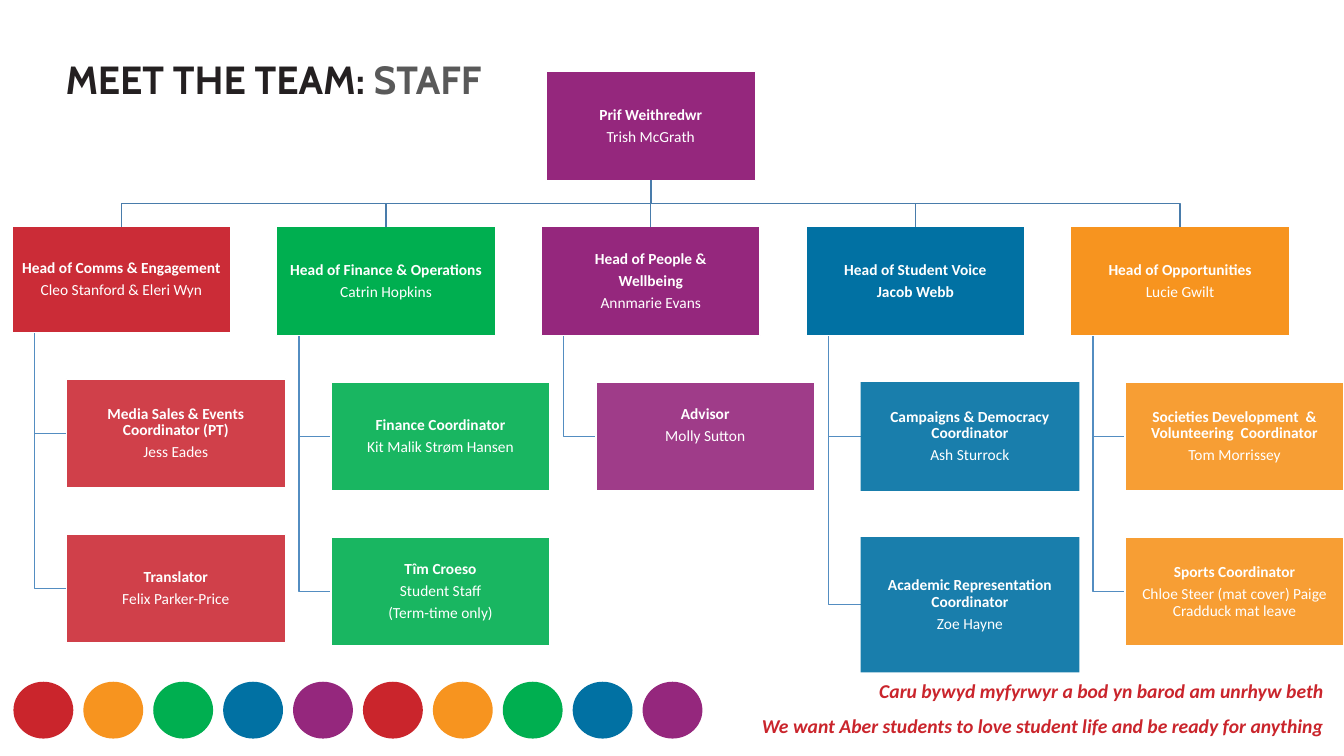
from lxml import etree
from pptx import Presentation
from pptx.dml.color import RGBColor
from pptx.enum.shapes import MSO_CONNECTOR, MSO_SHAPE
from pptx.enum.text import MSO_ANCHOR, MSO_AUTO_SIZE, PP_ALIGN
from pptx.oxml.ns import qn
from pptx.util import Inches, Pt

RECT, OVAL = MSO_SHAPE.RECTANGLE, MSO_SHAPE.OVAL
STRAIGHT = MSO_CONNECTOR.STRAIGHT
MIDDLE, TOP, NO_FIT = MSO_ANCHOR.MIDDLE, MSO_ANCHOR.TOP, MSO_AUTO_SIZE.NONE
LEFT, CENTER, RIGHT = PP_ALIGN.LEFT, PP_ALIGN.CENTER, PP_ALIGN.RIGHT

COLORS = {
    "red": "CA252C", "crimson": "CB2C37", "orange": "F7941F",
    "green": "00AF50", "blue": "0171A3", "purple": "95277D",
    "white": "FFFFFF", "ink": "242021", "grey": "595959",
    "trunk": "497CAB", "branch": "538DC1",
}
CARD_W, CARD_H = 2.17, 1.08
CHILD_DX, CHILD_GAP, CHILD_PITCH, BRANCH_DX = 0.54, 0.46, 1.54, 0.22
DOTS = ["red", "orange", "green", "blue", "purple"] * 2
MOTTO = ["Caru bywyd myfyrwyr a bod yn barod am unrhyw beth",
         "We want Aber students to love student life and be ready for anything"]

BOSS = {"bold": ["Prif Weithredwr"], "plain": ["Trish McGrath"]}
TEAMS = [
    {"color": "crimson", "head": {"bold": ["Head of Comms & Engagement"],
                                  "plain": ["Cleo Stanford & Eleri Wyn"], "h": 1.05},
     "staff": [{"bold": ["Media Sales & Events Coordinator (PT)"], "plain": ["Jess Eades"]},
               {"bold": ["Translator"], "plain": ["Felix Parker-Price"]}]},
    {"color": "green", "head": {"bold": ["Head of Finance & Operations"],
                                "plain": ["Catrin Hopkins"]},
     "staff": [{"bold": ["Finance Coordinator"], "plain": ["Kit Malik Strøm Hansen"]},
               {"bold": ["Tîm Croeso"], "plain": ["Student Staff", "(Term-time only)"]}]},
    {"color": "purple", "head": {"bold": ["Head of People &", "Wellbeing"],
                                 "plain": ["Annmarie Evans"]},
     "staff": [{"bold": ["Advisor"], "plain": ["Molly Sutton"], "bottom": 0.23}]},
    {"color": "blue", "outline": False,
     "head": {"bold": ["Head of Student Voice", "Jacob Webb"], "plain": []},
     "staff": [{"bold": ["Campaigns & Democracy Coordinator"], "plain": ["Ash Sturrock"]},
               {"bold": ["Academic Representation Coordinator"], "plain": ["Zoe Hayne"],
                "h": 1.34}]},
    {"color": "orange", "head": {"bold": ["Head of Opportunities"], "plain": ["Lucie Gwilt"]},
     "staff": [{"bold": ["Societies Development  & Volunteering  Coordinator"],
                "plain": ["Tom Morrissey"]},
               {"bold": ["Sports Coordinator"],
                "plain": ["Chloe Steer (mat cover) Paige Cradduck mat leave"]}]},
]


def rgb(name):
    """Return the named colour."""
    return RGBColor.from_string(COLORS[name])


def set_attrs(obj, values):
    """Set each attribute of an object from a dict."""
    for name, value in values.items():
        setattr(obj, name, value)


def add_run(p, text, color, **font):
    """Add a formatted run to a paragraph."""
    r = p.add_run()
    r.text = text
    set_attrs(r.font, font)
    r.font.color.rgb = rgb(color)


def add_filled(slide, kind, box, color, outline, alpha=None):
    """Add a filled preset shape, optionally outlined and translucent."""
    sp = slide.shapes.add_shape(kind, *map(Inches, box))
    sp.shadow.inherit = False
    sp.fill.solid()
    sp.fill.fore_color.rgb = rgb(color)
    if outline:
        sp.line.color.rgb = rgb(outline)
        sp.line.width = Pt(1)
    else:
        sp.line.fill.background()
    if alpha:
        clr = sp.fill._xPr.find(qn("a:solidFill"))[0]
        etree.SubElement(clr, qn("a:alpha")).set("val", str(alpha * 1000))
    return sp


def add_card(slide, x, y, w, card, color, outline="white", alpha=None):
    """Add a staff card with bold roles above plain names."""
    sp = add_filled(slide, RECT, (x, y, w, card.get("h", CARD_H)), color, outline, alpha)
    tf = sp.text_frame
    edge = Inches(0.01)
    set_attrs(tf, {"word_wrap": True, "vertical_anchor": MIDDLE, "margin_left": edge,
                   "margin_right": edge, "margin_top": edge,
                   "margin_bottom": Inches(card.get("bottom", 0.01))})
    lines = [(text, True) for text in card["bold"]] + [(text, False) for text in card["plain"]]
    for i, (text, bold) in enumerate(lines):
        p = tf.add_paragraph() if i else tf.paragraphs[0]
        set_attrs(p, {"alignment": CENTER, "line_spacing": 0.9, "space_after": Pt(3.85)})
        add_run(p, text, "white", name="Calibri", size=Pt(11), bold=bold)
    return sp


def add_elbow(slide, points, color):
    """Add an open bent line through the points."""
    pts = [(Inches(x), Inches(y)) for x, y in points]
    builder = slide.shapes.build_freeform(*pts[0])
    builder.add_line_segments(pts[1:], close=False)
    sp = builder.convert_to_shape()
    sp.shadow.inherit = False
    sp.fill.background()
    sp.line.color.rgb = rgb(color)
    sp.line.width = Pt(1)


def add_trunk(slide, boss, head):
    """Join two cards that stand one above the other."""
    cxn = slide.shapes.add_connector(STRAIGHT, 0, 0, 0, 0)
    cxn.begin_connect(boss, 2)
    cxn.end_connect(head, 0)
    cxn.line.color.rgb = rgb("trunk")
    cxn.line.width = Pt(1)
    etree.SubElement(cxn._element.spPr, qn("a:effectLst"))


def add_team(slide, x, y, team):
    """Add a head card with its staff hanging below, and return the head."""
    color = team["color"]
    bottom = y + team["head"].get("h", CARD_H)
    left = x + CHILD_DX
    outline = "white" if team.get("outline", True) else None
    for i, card in enumerate(team["staff"]):
        top = bottom + CHILD_GAP + i * CHILD_PITCH
        mid = top + card.get("h", CARD_H) / 2
        stem = x + BRANCH_DX
        add_elbow(slide, [(stem, bottom), (stem, mid), (left, mid)], "branch")
        add_card(slide, left, top, CARD_W, card, color, outline, alpha=90)
    return add_card(slide, x, y, CARD_W, team["head"], color)


def add_chart_tree(slide, x, y, w, h):
    """Add the organisation tree inside a box."""
    boss_w, head_y = 2.08, y + 1.54
    pitch = (w - CHILD_DX - CARD_W) / (len(TEAMS) - 1)
    mid = x + 2 * pitch + CARD_W / 2
    boss_bottom = y + CARD_H
    bus = (boss_bottom + head_y) / 2
    boss = add_card(slide, mid - boss_w / 2, y, boss_w, BOSS, "purple")
    for i, team in enumerate(TEAMS):
        left = x + i * pitch
        head = add_team(slide, left, head_y, team)
        if i == len(TEAMS) // 2:
            add_trunk(slide, boss, head)
        else:
            end = left + CARD_W / 2
            add_elbow(slide, [(mid, boss_bottom), (mid, bus), (end, bus), (end, head_y)],
                      "trunk")


def add_title(slide, x, y, w, h):
    """Place and format the title."""
    sp = slide.shapes.title
    set_attrs(sp, {"left": Inches(x), "top": Inches(y), "width": Inches(w),
                   "height": Inches(h)})
    set_attrs(sp.text_frame, {"word_wrap": True, "auto_size": NO_FIT,
                              "vertical_anchor": MIDDLE})
    p = sp.text_frame.paragraphs[0]
    p.alignment = LEFT
    for text, color in (("MEET THE TEAM: ", "ink"), ("STAFF", "grey")):
        add_run(p, text, color, name="Cabin", size=Pt(28), bold=True)


def add_dots(slide, x, y, w, h):
    """Add the evenly spaced row of coloured dots."""
    dot_w = 0.58
    pitch = (w - dot_w) / (len(DOTS) - 1)
    for i, color in enumerate(DOTS):
        add_filled(slide, OVAL, (x + i * pitch, y, dot_w, h), color, color)


def add_motto(slide, x, y, w, h):
    """Add the two-language motto."""
    tf = slide.shapes.add_textbox(*map(Inches, (x, y, w, h))).text_frame
    set_attrs(tf, {"word_wrap": True, "vertical_anchor": TOP})
    for i, text in enumerate(MOTTO):
        p = tf.add_paragraph() if i else tf.paragraphs[0]
        set_attrs(p, {"alignment": RIGHT, "line_spacing": 1.5})
        add_run(p, text, "red", name="Calibri", size=Pt(14), bold=True, italic=True)


def main():
    """Build and save the slide."""
    prs = Presentation()
    prs.slide_width, prs.slide_height = Inches(13.33), Inches(7.5)
    slide = prs.slides.add_slide(prs.slide_layouts[5])
    add_motto(slide, 6.7, 6.57, 6.53, 0.77)
    add_dots(slide, 0.14, 6.77, 6.82, 0.55)
    add_title(slide, 0.55, 0.5, 12.25, 0.57)
    add_chart_tree(slide, 0.12, 0.71, 13.21, 5.96)
    prs.save("out.pptx")


if __name__ == "__main__":
    main()
